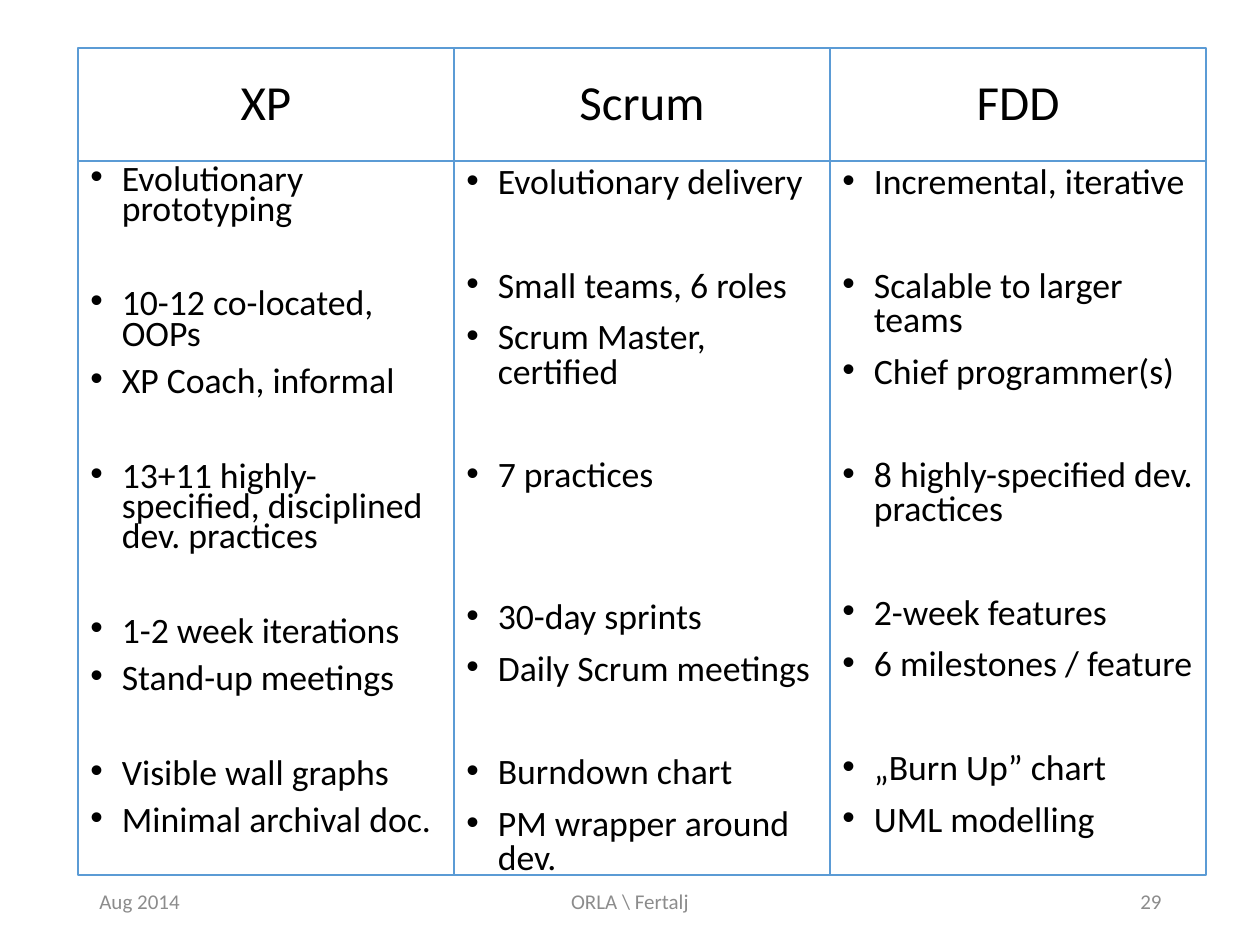
from lxml import etree
from pptx import Presentation
from pptx.dml.color import RGBColor
from pptx.enum.shapes import MSO_SHAPE
from pptx.enum.text import MSO_ANCHOR, PP_ALIGN
from pptx.oxml.ns import qn
from pptx.util import Pt

PX = 914400 / 126
RECT = MSO_SHAPE.RECTANGLE
TOP, MIDDLE = MSO_ANCHOR.TOP, MSO_ANCHOR.MIDDLE
LEFT, CENTER, RIGHT = PP_ALIGN.LEFT, PP_ALIGN.CENTER, PP_ALIGN.RIGHT
BLACK = RGBColor(0x00, 0x00, 0x00)
BLUE = RGBColor(0x5B, 0x9B, 0xD5)
GRAY = RGBColor(0x8C, 0x8C, 0x8C)


def px(*sizes):
    return [round(size * PX) for size in sizes]


def style(para, size, color, align):
    para.alignment = align
    for run in para.runs:
        run.font.name = "Calibri"
        run.font.size = Pt(size)
        run.font.color.rgb = color


# Each column: heading, line spacing, gap before a group, groups of points
columns = [
    ("XP", 0.7, 37, [
        ["Evolutionary prototyping"],
        ["10-12 co-located, OOPs", "XP Coach, informal"],
        ["13+11 highly-specified, disciplined dev. practices"],
        ["1-2 week iterations", "Stand-up meetings"],
        ["Visible wall graphs", "Minimal archival doc."],
    ]),
    ("Scrum", 0.8, 39.5, [
        ["Evolutionary delivery"],
        ["Small teams, 6 roles", "Scrum Master, certified"],
        ["7 practices"],
        ["30-day sprints", "Daily Scrum meetings"],
        ["Burndown chart", "PM wrapper around dev."],
    ]),
    ("FDD", 0.8, 39.5, [
        ["Incremental, iterative"],
        ["Scalable to larger teams", "Chief programmer(s)"],
        ["8 highly-specified dev. practices"],
        ["2-week features", "6 milestones / feature"],
        ["„Burn Up” chart", "UML modelling"],
    ]),
]
WIDTH = 376
EXTRA = {"30-day sprints": 22}  # wider gap after the short practices entry

deck = Presentation()
deck.slide_width, deck.slide_height = px(1260, 945)
slide = deck.slides.add_slide(deck.slide_layouts[6])
shapes = slide.shapes

for col, (name, lines, gap, groups) in enumerate(columns):
    # Heading and body boxes
    frames = []
    for top, height, anchor in [(48, 113, MIDDLE), (161, 714, TOP)]:
        box = shapes.add_shape(RECT, *px(78 + col * WIDTH, top, WIDTH, height))
        box.shadow.inherit = False
        box.fill.background()
        box.line.color.rgb = BLUE
        box.line.width = Pt(0.75)
        box.text_frame.word_wrap = True
        box.text_frame.vertical_anchor = anchor
        frames.append(box.text_frame)
    head, body = frames

    # Heading text
    head.text = name
    para = head.paragraphs[0]
    para.line_spacing = 0.9
    para.space_before = Pt(10)
    style(para, 28, BLACK, CENTER)

    # Bulleted points, with a gap before each group after the first
    body.text = "\n".join(point for group in groups for point in group)
    starts = [group[0] for group in groups[1:]]
    for para in body.paragraphs:
        para.line_spacing = lines
        before = gap if para.text in starts else 10
        para.space_before = Pt(before + EXTRA.get(para.text, 0))
        style(para, 20.4, BLACK, LEFT)
        props = para._p.get_or_add_pPr()
        props.set("marL", "228600")
        props.set("indent", "-228600")
        font = etree.SubElement(props, qn("a:buFont"))
        font.set("typeface", "Arial")
        etree.SubElement(props, qn("a:buChar")).set("char", "•")

# Footer
for left, width, text, align in [
    (87, 284, "Aug 2014", LEFT),
    (417, 426, "ORLA \\ Fertalj", CENTER),
    (890, 284, "29", RIGHT),
]:
    frame = shapes.add_textbox(*px(left, 876, width, 50)).text_frame
    frame.word_wrap = True
    frame.vertical_anchor = MIDDLE
    frame.text = text
    style(frame.paragraphs[0], 12, GRAY, align)

deck.save("out.pptx")
